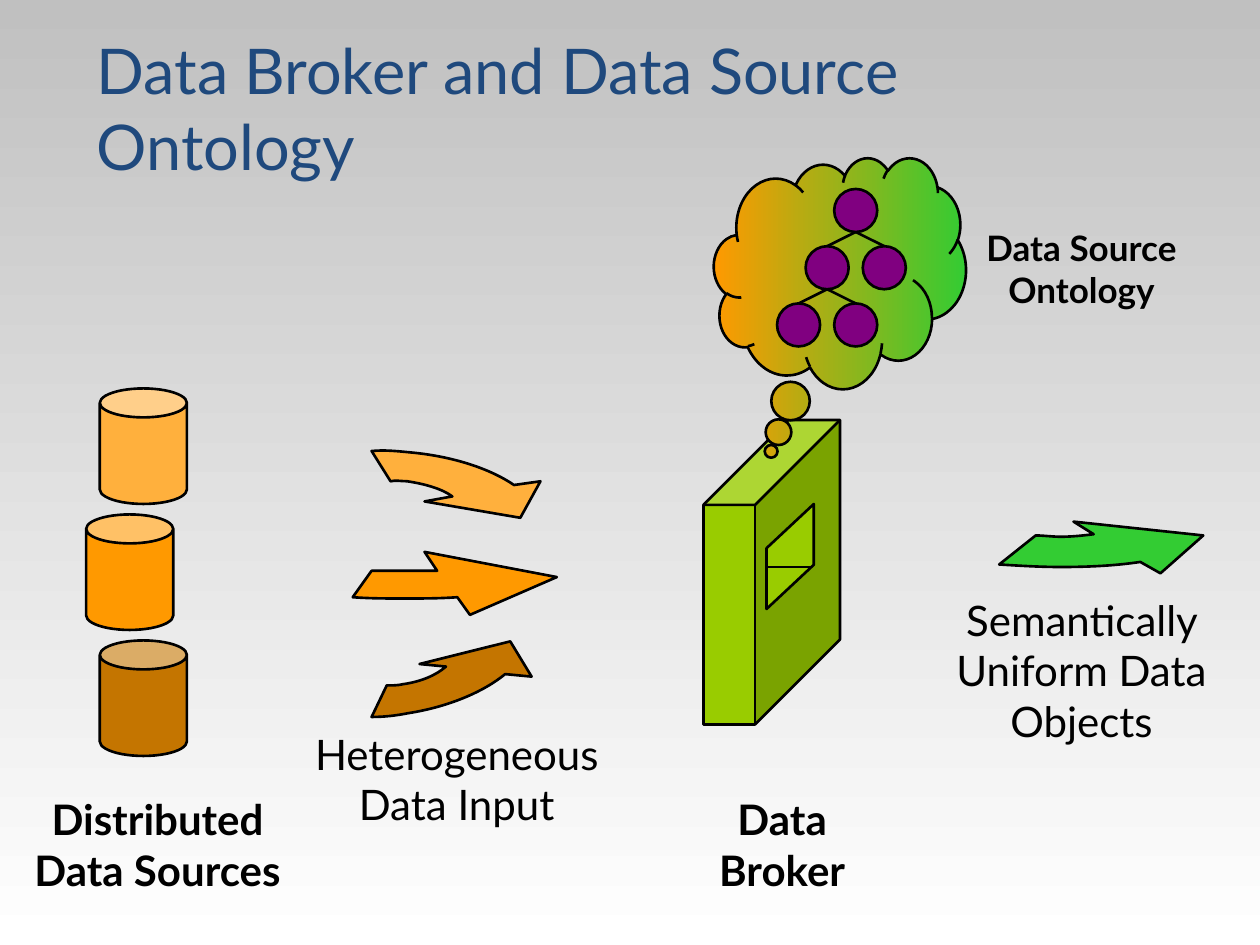
from dataclasses import dataclass
from math import cos, radians, sin

from lxml import etree
from pptx import Presentation
from pptx.dml.color import RGBColor
from pptx.enum import shapes, text
from pptx.oxml.ns import qn
from pptx.util import Inches, Pt

Point = tuple[float, float]
Kind = shapes.MSO_SHAPE
FONT = "Lato"
BLACK, ORANGE, LIGHT_ORANGE, BROWN = "000000", "FF9900", "FFB03D", "C47500"
GREEN, LIME, PURPLE, NAVY = "33CC33", "99CC00", "800080", "1F497D"
SILVER, WHITE = "C0C0C0", "FFFFFF"
CELLS_PER_INCH = 12  # the slide is a grid of 120 columns by 90 rows


@dataclass
class Box:
    col: float
    row: float
    cols: float
    rows: float


@dataclass
class Label:
    box: Box
    lines: list[str]
    size: int = 24
    bold: bool = False


@dataclass
class Arrow:
    """Bent arrow: two double curves and a head, in hundredths of an inch."""
    color: str
    frame: Box
    turn: float
    inner: list[Point]
    outer: list[Point]
    head: list[Point]


def cells(count: float) -> int:
    return Inches(count / CELLS_PER_INCH)


def place(box: Box) -> tuple[int, int, int, int]:
    return cells(box.col), cells(box.row), cells(box.cols), cells(box.rows)


def rgb(color: str) -> RGBColor:
    return RGBColor.from_string(color)


def shade(fill, colors: tuple[str, str], angle: float) -> None:
    fill.gradient()
    fill.gradient_angle = angle
    for stop, color in zip(fill.gradient_stops, colors):
        stop.color.rgb = rgb(color)


def outline(shape) -> None:
    shape.line.color.rgb = rgb(BLACK)
    shape.line.width = Pt(1.5)


def paint(shape, color: str) -> None:
    shape.shadow.inherit = False
    shape.fill.solid()
    shape.fill.fore_color.rgb = rgb(color)
    outline(shape)


def add_preset(slide, kind: Kind, box: Box, color: str, adjust: tuple = ()):
    shape = slide.shapes.add_shape(kind, *place(box))
    for index, value in enumerate(adjust):
        shape.adjustments[index] = value
    paint(shape, color)
    return shape


def add_line(slide, start: Point, end: Point) -> None:
    line = slide.shapes.add_connector(
        shapes.MSO_CONNECTOR.STRAIGHT, *map(cells, (*start, *end)))
    outline(line)
    etree.SubElement(line._element.spPr, qn("a:effectLst"))


def add_run(paragraph, words: str, size: int, color: str, bold: bool) -> None:
    run = paragraph.add_run()
    run.text = words
    run.font.name, run.font.size, run.font.bold = FONT, Pt(size), bold
    run.font.color.rgb = rgb(color)


def add_label(slide, label: Label) -> None:
    frame = slide.shapes.add_textbox(*place(label.box)).text_frame
    frame.word_wrap = True
    for index, words in enumerate(label.lines):
        paragraph = frame.add_paragraph() if index else frame.paragraphs[0]
        paragraph.alignment = text.PP_ALIGN.CENTER
        add_run(paragraph, words, label.size, BLACK, label.bold)


def add_arrow(slide, arrow: Arrow) -> None:
    left, top, width, height = place(arrow.frame)
    builder = slide.shapes.build_freeform(left, top)
    builder.add_line_segments([(left + width, top), (left + width, top + height),
                               (left, top + height)], close=True)
    shape = builder.convert_to_shape()
    paint(shape, arrow.color)
    shape.rotation = arrow.turn

    # Replace the frame's straight outline by curves, turned back about its centre
    outline_path = next(shape._element.iter(qn("a:path")))
    for part in list(outline_path):
        outline_path.remove(part)
    turn = radians(arrow.turn)

    def draw(command: str, points: list[Point]) -> None:
        step = etree.SubElement(outline_path, qn(f"a:{command}"))
        for x, y in points:
            dx = Inches(x / 100) - left - width / 2
            dy = Inches(y / 100) - top - height / 2
            etree.SubElement(step, qn("a:pt"),
                             x=str(round(width / 2 + dx * cos(turn) + dy * sin(turn))),
                             y=str(round(height / 2 + dy * cos(turn) - dx * sin(turn))))

    for command, side in (("moveTo", arrow.inner), ("lnTo", arrow.outer)):
        draw(command, side[:1])
        draw("cubicBezTo", side[1:4])
        draw("cubicBezTo", side[4:])
    for point in [*arrow.head, arrow.inner[0]]:
        draw("lnTo", [point])
    draw("close", [])


def add_backdrop(slide) -> None:
    """Fill the master with a gradient panel behind everything else."""
    panel = slide.shapes.add_shape(Kind.RECTANGLE, *place(Box(0, 0, 120, 90)))
    panel.shadow.inherit = False
    shade(panel.fill, (SILVER, WHITE), 270)
    panel.line.fill.background()
    slide.slide_layout.slide_master.shapes._spTree.insert(2, panel._element)


def add_sources(slide) -> None:
    for col, row, color in ((8.2, 49, ORANGE), (9.5, 37, LIGHT_ORANGE), (9.5, 61, BROWN)):
        add_preset(slide, Kind.CAN, Box(col, row, 8.3, 11), color, (0.332,))


def add_broker(slide) -> None:
    add_preset(slide, Kind.CUBE, Box(67, 40, 13, 29), LIME, (0.622,))
    window = add_preset(slide, Kind.PARALLELOGRAM, Box(70.25, 50.75, 10, 4.5), LIME, (0.935,))
    window.rotation = 270
    window._element.spPr.xfrm.set("flipH", "1")
    add_line(slide, (77.3, 54), (73, 54))


def add_ontology(slide) -> None:
    cloud = add_preset(slide, Kind.CLOUD_CALLOUT, Box(68, 15, 24, 22), ORANGE, (-0.273, 0.772))
    shade(cloud.fill, (ORANGE, GREEN), 0)
    size, col_step, row_step = 4.1, 2.72, 5.45
    # Tree nodes as (steps right of the root, level)
    tree = {(0, 0): [(-1, 1), (1, 1)], (-1, 1): [(-2, 2), (0, 2)]}

    def top(node: Point) -> Point:
        return 81.5 + node[0] * col_step, 18 + node[1] * row_step

    for parent, children in tree.items():
        x, y = top(parent)
        for child in children:
            add_line(slide, (x, y + size), top(child))
    for node in [(0, 0), *sum(tree.values(), [])]:
        x, y = top(node)
        add_preset(slide, Kind.OVAL, Box(x - size / 2, y, size, size), PURPLE)


ARROWS = [
    Arrow(GREEN, Box(84, 44, 34, 10), 0,
          [(868, 424), (860, 425), (851, 426), (842, 426), (835, 426), (828, 425), (822, 425)],
          [(793, 448), (809, 449), (825, 450), (842, 450), (864, 450), (885, 449), (905, 446)],
          [(921, 455), (955, 425), (852, 414)]),
    Arrow(ORANGE, Box(14, 43, 49, 14), 0,
          [(347, 453), (339, 453), (330, 453), (321, 453), (312, 453), (304, 453), (295, 453)],
          [(280, 474), (294, 475), (307, 475), (321, 475), (335, 475), (349, 475), (363, 474)],
          [(373, 488), (442, 458), (337, 438)]),
    Arrow(BROWN, Box(26, 58, 24, 10), 350.3,
          [(354, 529), (346, 536), (334, 541), (320, 543), (316, 544), (311, 544), (307, 544)],
          [(295, 569), (305, 569), (314, 568), (324, 566), (356, 561), (384, 549), (401, 535)],
          [(422, 537), (405, 509), (333, 527)]),
    Arrow(LIGHT_ORANGE, Box(25.9, 43.1, 25, 10), 6,
          [(359, 394), (351, 388), (337, 384), (323, 382), (318, 382), (314, 381), (310, 382)],
          [(295, 358), (305, 357), (315, 358), (325, 359), (359, 362), (389, 372), (408, 385)],
          [(429, 382), (413, 411), (337, 398)]),
]
LABELS = [
    Label(Box(0, 75, 30, 10.9), ["Distributed Data Sources"], bold=True),
    Label(Box(65, 75, 19, 10.9), ["Data", "Broker"], bold=True),
    Label(Box(88, 21, 30, 9.25), ["Data Source Ontology"], size=20, bold=True),
    Label(Box(26, 68.75, 35, 10.9), ["Heterogeneous Data Input"]),
    Label(Box(88, 56, 30, 15.7), ["Semantically Uniform Data Objects"]),
]


def main() -> None:
    deck = Presentation()
    deck.slide_width, deck.slide_height = cells(120), cells(90)
    slide = deck.slides.add_slide(deck.slide_layouts[5])
    add_backdrop(slide)

    # Title
    title = slide.shapes.title
    title.left, title.top, title.width, title.height = place(Box(8, 9, 102, 9))
    frame = title.text_frame
    frame.auto_size = text.MSO_AUTO_SIZE.NONE
    frame.vertical_anchor = text.MSO_ANCHOR.BOTTOM
    frame.paragraphs[0].alignment = text.PP_ALIGN.LEFT
    add_run(frame.paragraphs[0], "Data Broker and Data Source Ontology", 36, NAVY, False)

    # Data flow from the sources through the broker
    add_sources(slide)
    add_broker(slide)
    add_ontology(slide)
    for arrow in ARROWS:
        add_arrow(slide, arrow)
    for label in LABELS:
        add_label(slide, label)
    deck.save("out.pptx")


if __name__ == "__main__":
    main()
